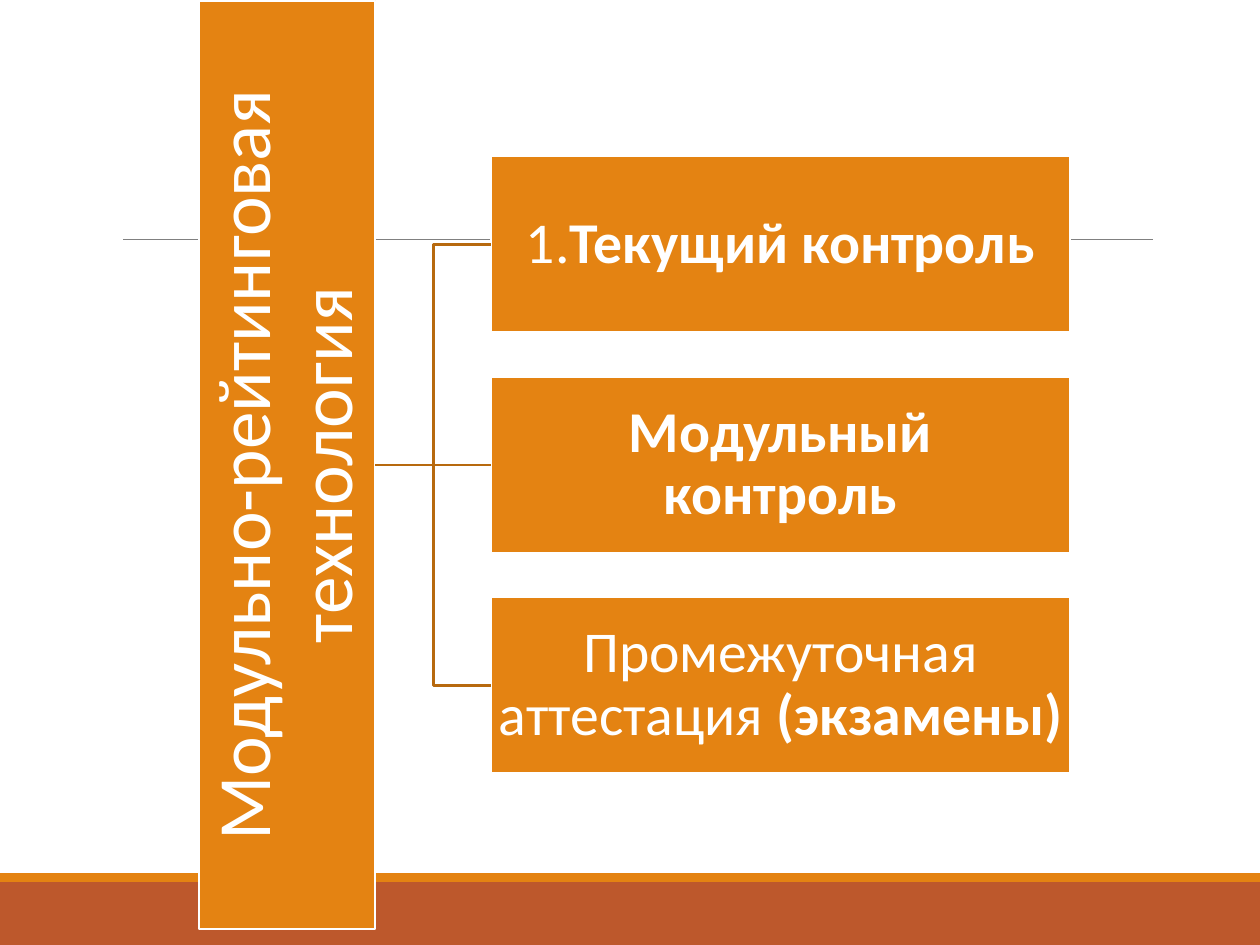
from pptx import Presentation
from pptx.dml.color import RGBColor
from pptx.enum.shapes import MSO_CONNECTOR, MSO_SHAPE
from pptx.enum.text import MSO_ANCHOR, PP_ALIGN
from pptx.oxml.ns import qn
from pptx.util import Inches, Pt
from lxml import etree

RECT = MSO_SHAPE.RECTANGLE
STRAIGHT, ELBOW = MSO_CONNECTOR.STRAIGHT, MSO_CONNECTOR.ELBOW
MIDDLE, CENTER = MSO_ANCHOR.MIDDLE, PP_ALIGN.CENTER
ORANGE = RGBColor(0xE4, 0x83, 0x12)
RUST = RGBColor(0xBD, 0x58, 0x2C)
BROWN = RGBColor(0xB7, 0x69, 0x0E)
GRAY = RGBColor(0x80, 0x80, 0x80)
WHITE = RGBColor(0xFF, 0xFF, 0xFF)

ROOT = [("Модульно-рейтинговая технология", False)]
CONTROLS = [
    [("1.", False), ("Текущий контроль", True)],
    [("Модульный\vконтроль", True)],
    [("Промежуточная аттестация ", False), ("(экзамены)", True)],
]
BANDS = [(7, 0.5, RUST), (6.93, 0.07, ORANGE)]

ROOT_LEFT, ROOT_HEIGHT = 1.58, 7.37
BOX_LEFT, BOX_WIDTH, BOX_HEIGHT = 3.9, 4.59, 1.4
MID_Y, PITCH = 3.69, 1.75


def add_rect(s, left, top, width, height, color):
    sp = s.shapes.add_shape(RECT, Inches(left), Inches(top), Inches(width), Inches(height))
    sp.shadow.inherit = False
    sp.fill.solid()
    sp.fill.fore_color.rgb = color
    sp.line.fill.background()
    return sp


def add_box(s, left, width, height, mid_y, runs, size, inset):
    sp = add_rect(s, left, mid_y - height / 2, width, height, ORANGE)
    sp.line.color.rgb = WHITE
    sp.line.width = Pt(1.25)
    tf = sp.text_frame
    layout = {"word_wrap": True, "vertical_anchor": MIDDLE}
    layout |= {f"margin_{side}": Inches(inset) for side in ("left", "top", "right", "bottom")}
    for name, value in layout.items():
        setattr(tf, name, value)
    p = tf.paragraphs[0]
    p.alignment = CENTER
    p.line_spacing = 0.9
    for name, value in {"name": "Calibri", "size": Pt(size)}.items():
        setattr(p.font, name, value)
    for text, bold in runs:
        for i, part in enumerate(text.split("\v")):
            if i:
                p.add_line_break()
            r = p.add_run()
            r.text = part
            font = {"name": "Calibri", "size": Pt(size), "bold": bold}
            for name, value in font.items():
                setattr(r.font, name, value)
            r.font.color.rgb = WHITE
    return sp


def add_line(s, kind, x1, y1, x2, y2, color, width):
    line = s.shapes.add_connector(kind, Inches(x1), Inches(y1), Inches(x2), Inches(y2))
    line.line.color.rgb = color
    line.line.width = Pt(width)
    etree.SubElement(line._element.spPr, qn("a:effectLst"))
    return line


def main():
    prs = Presentation()
    prs.slide_width, prs.slide_height = Inches(10), Inches(7.5)
    s = prs.slides.add_slide(prs.slide_layouts[6])

    for top, height, color in BANDS:
        add_rect(s, 0, top, 10, height, color)
    add_line(s, STRAIGHT, 0.98, 1.9, 9.15, 1.9, GRAY, 0.5)

    root = add_box(s, ROOT_LEFT, BOX_HEIGHT, ROOT_HEIGHT, MID_Y, ROOT, 43, 0.03)
    root.text_frame._txBody.bodyPr.set("vert", "vert270")

    for i, runs in enumerate(CONTROLS):
        offset = i - (len(CONTROLS) - 1) / 2
        mid_y = MID_Y + offset * PITCH
        box = add_box(s, BOX_LEFT, BOX_WIDTH, BOX_HEIGHT, mid_y, runs, 33, 0.02)
        kind = ELBOW if offset else STRAIGHT
        line = add_line(s, kind, ROOT_LEFT + BOX_HEIGHT, MID_Y, BOX_LEFT, mid_y, BROWN, 1.25)
        line.begin_connect(root, 3)
        line.end_connect(box, 1)

    prs.save("out.pptx")


if __name__ == "__main__":
    main()
